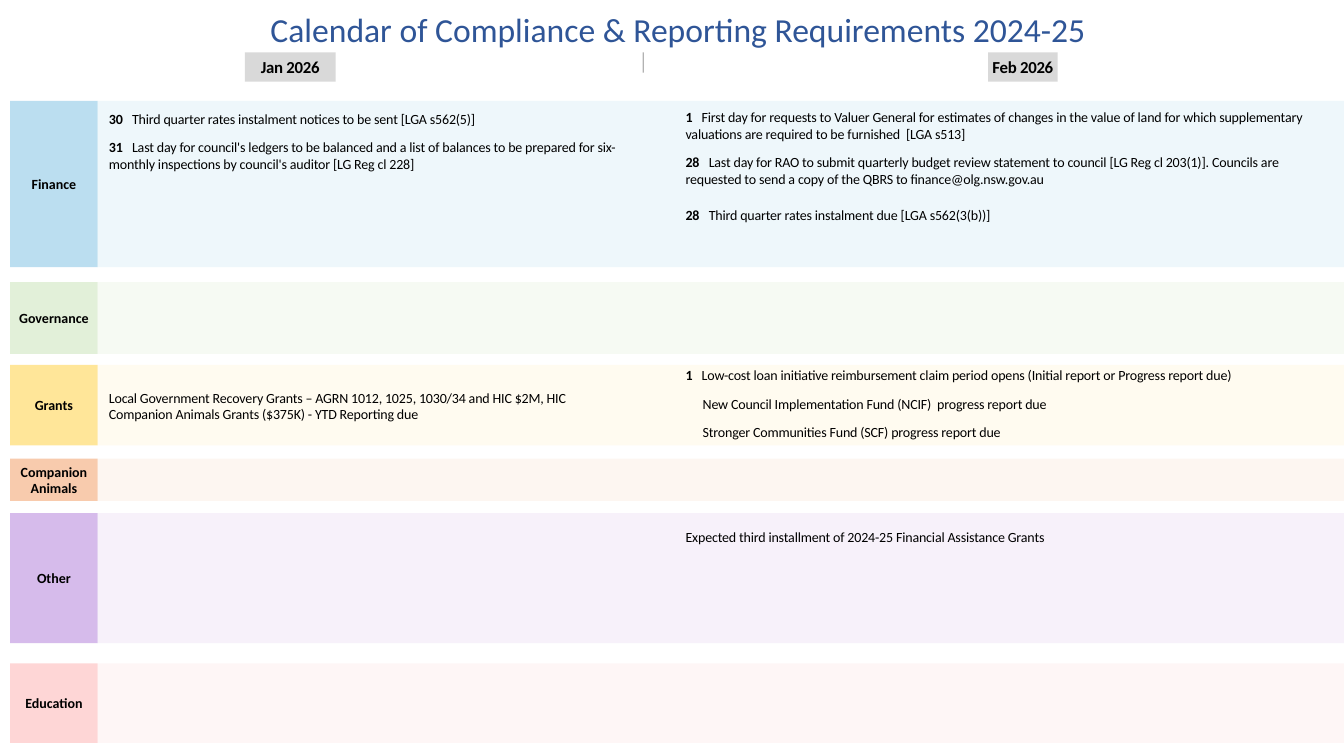
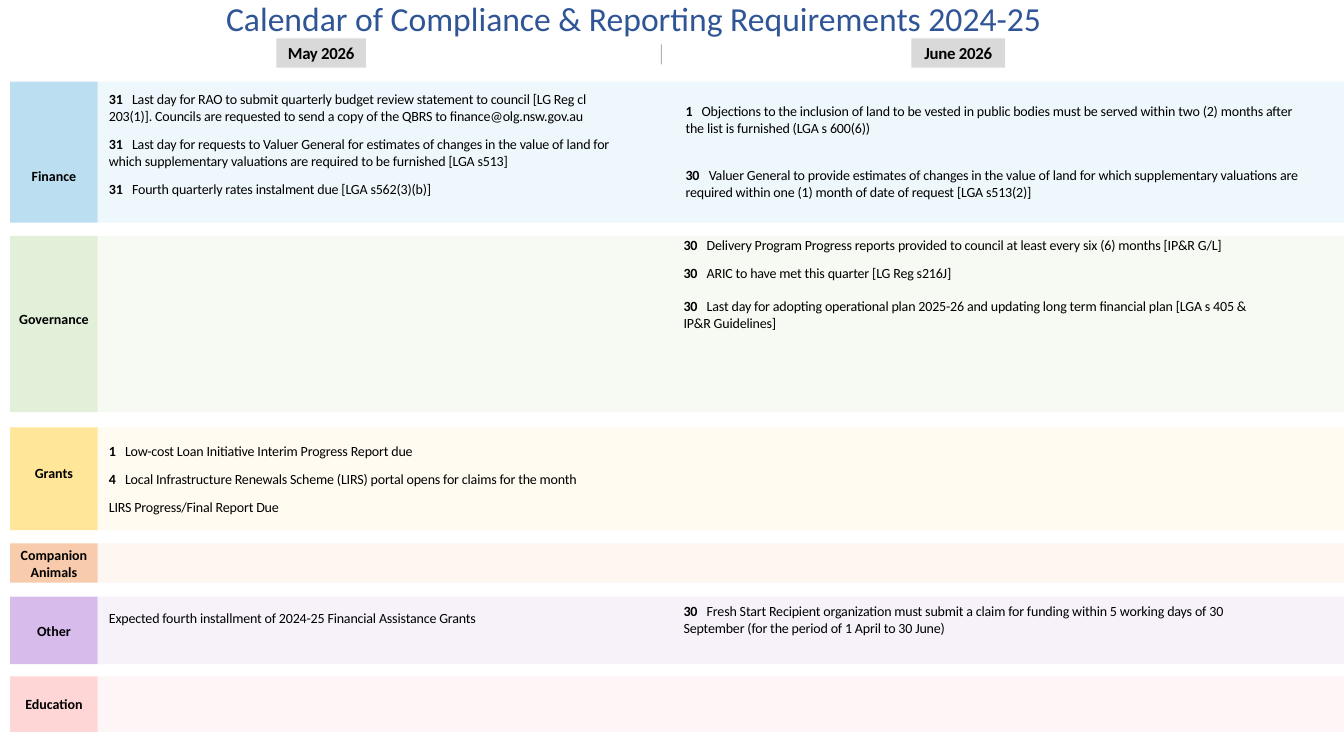
from dataclasses import dataclass, field

from lxml import etree
from pptx import Presentation
from pptx.dml.color import RGBColor
from pptx.enum import shapes, text
from pptx.oxml.ns import qn
from pptx.util import Pt

PX = 9144  # EMU per px, 100 px to the inch
WIDE, HIGH = 1333, 750
LEFT, EDGE = 10, 97  # left and right side of the label blocks
LINE = 17
COLS = {  # left side and width of the text columns
    "first": (108, 505),
    "last": (680, 620),
    "slim": (678, 586),
    "inner": (697, 460),
}


@dataclass(frozen=True)
class Theme:
    font: str = "Calibri"
    ink: str = "000000"
    head: str = "2F5597"
    month: str = "D9D9D9"
    head_pt: int = 24
    month_pt: int = 12
    body_pt: int = 10
    gap_pt: int = 8
    clear: int = 20
    rule_clear: int = 30
    # topic: (label block, tinted band)
    topics: dict = field(default_factory=lambda: {
        "Finance": ("BBDEF0", "ADD8ED"),
        "Governance": ("E2F0D9", "D3E8C6"),
        "Grants": ("FFE699", "FFECB7"),
        "Companion Animals": ("F8CBAD", "F9D5BD"),
        "Other": ("D6BBEB", "D7BCEA"),
        "Education": ("FED6D6", "FED6D6"),
    })


class Deck:
    def __init__(self, theme):
        self.theme = theme
        self.prs = Presentation()
        self.prs.slide_width, self.prs.slide_height = WIDE * PX, HIGH * PX
        self.slide = None

    def page(self):
        self.slide = self.prs.slides.add_slide(self.prs.slide_layouts[5])

    def run(self, para, words, size, color=None, bold=False, track=0):
        """Add one run; track is letter spacing in hundredths of a point."""
        run = para.add_run()
        run.text = words
        run.font.name, run.font.size, run.font.bold = self.theme.font, Pt(size), bold
        run.font.color.rgb = RGBColor.from_string(color or self.theme.ink)
        if track:
            run.font._element.set("spc", str(track))

    def fade(self, part, opacity):
        """Make the colour of a shape or line partly transparent."""
        tone = part._element.spPr.find(".//" + qn("a:srgbClr"))
        etree.SubElement(tone, qn("a:alpha")).set("val", str(opacity * 1000))

    def frame(self, shape, anchor=text.MSO_ANCHOR.MIDDLE, wrap=True):
        """Set up a text frame without insets."""
        box = shape.text_frame
        box.word_wrap, box.vertical_anchor = wrap, anchor
        box.margin_left = box.margin_right = box.margin_top = box.margin_bottom = 0
        return box

    def title(self, x, y, words):
        head = self.slide.shapes.title
        head.left, head.top, head.width, head.height = (n * PX for n in (x, y, 857, 50))
        box = self.frame(head)
        para = box.paragraphs[0]
        para.alignment = text.PP_ALIGN.CENTER
        self.run(para, words, self.theme.head_pt, self.theme.head)

    def rect(self, area, color):
        shape = self.slide.shapes.add_shape(
            shapes.MSO_SHAPE.RECTANGLE, *(n * PX for n in area))
        shape.shadow.inherit = False
        shape.fill.solid()
        shape.fill.fore_color.rgb = RGBColor.from_string(color)
        shape.line.fill.background()
        return shape

    def tag(self, words, area, color, size, wrap=True, track=0):
        """Add a filled box with a bold centred name."""
        box = self.frame(self.rect(area, color), wrap=wrap)
        para = box.paragraphs[0]
        para.alignment = text.PP_ALIGN.CENTER
        self.run(para, words, size, bold=True, track=track)
        return box

    def row(self, topic, top, high, drop=0):
        """Add a tinted band and its label, lowered by drop."""
        block, tint = self.theme.topics[topic]
        band = self.rect((EDGE, top, WIDE - EDGE, high), tint)
        self.fade(band, self.theme.clear)
        label = self.tag(topic, (LEFT, top, EDGE - LEFT, high), block, self.theme.body_pt)
        label.margin_top = 2 * drop * PX

    def month(self, name, x, y, w):
        self.tag(name, (x, y, w, 29), self.theme.month, self.theme.month_pt,
                 wrap=False, track=-20)

    def rule(self, x, y):
        line = self.slide.shapes.add_connector(
            shapes.MSO_CONNECTOR.STRAIGHT, x * PX, y * PX, x * PX, (y + 20) * PX)
        line.line.width = Pt(0.75)
        line.line.color.rgb = RGBColor.from_string(self.theme.ink)
        self.fade(line, self.theme.rule_clear)
        etree.SubElement(line._element.spPr, qn("a:effectLst"))

    def cell(self, col, top, *items):
        """List the (day, words) items of one month and topic."""
        x, w = COLS[col]
        shape = self.slide.shapes.add_textbox(
            x * PX, top * PX, w * PX, LINE * len(items) * PX)
        box = self.frame(shape, text.MSO_ANCHOR.TOP)
        for n, (day, words) in enumerate(items):
            para = box.add_paragraph() if n else box.paragraphs[0]
            if n:
                para.space_before = Pt(self.theme.gap_pt)
            if day:
                stops = etree.SubElement(para._p.get_or_add_pPr(), qn("a:tabLst"))
                stop = etree.SubElement(stops, qn("a:tab"))
                stop.set("pos", str((9 + 7 * len(day)) * PX))
                stop.set("algn", "l")
                self.run(para, day, self.theme.body_pt, bold=True, track=-10)
                words = "\t" + words
            self.run(para, words, self.theme.body_pt, track=-10)


TITLE = "Calendar of Compliance & Reporting Requirements 2024-25"
REVIEW = ("Last day for RAO to submit quarterly budget review statement to council "
          "[LG Reg cl 203(1)]. Councils are requested to send a copy of the QBRS to "
          "finance@olg.nsw.gov.au")
VALUES = ("day for requests to Valuer General for estimates of changes in the value "
          "of land for which supplementary valuations are required to be furnished")

# rows: topic, top, height, drop of the label; cells: column, top, items
PAGES = [
    dict(
        title=(244, 4),
        rule=(638, 52),
        months=[("Jan 2026", 243, 52, 90), ("Feb 2026", 980, 52, 69)],
        rows=[
            ("Finance", 100, 165),
            ("Governance", 280, 71),
            ("Grants", 362, 80),
            ("Companion Animals", 455, 42),
            ("Other", 509, 129),
            ("Education", 658, 79),
        ],
        cells=[
            ("first", 110,
             ("30", "Third quarter rates instalment notices to be sent [LGA s562(5)]"),
             ("31", "Last day for council's ledgers to be balanced and a list of balances "
                    "to be prepared for six-monthly inspections by council's auditor "
                    "[LG Reg cl 228]")),
            ("last", 108,
             ("1", f"First {VALUES}  [LGA s513]"),
             ("28", REVIEW)),
            ("last", 205,
             ("28", "Third quarter rates instalment due [LGA s562(3(b))]")),
            ("first", 386,
             ("", "Local Government Recovery Grants – AGRN 1012, 1025, 1030/34 and HIC $2M, "
                  "HIC Companion Animals Grants ($375K) - YTD Reporting due")),
            ("last", 364,
             ("1", "Low-cost loan initiative reimbursement claim period opens "
                   "(Initial report or Progress report due)")),
            ("inner", 392,
             ("", "New Council Implementation Fund (NCIF)  progress report due"),
             ("", "Stronger Communities Fund (SCF) progress report due")),
            ("last", 524,
             ("", "Expected third installment of 2024-25 Financial Assistance Grants")),
        ],
    ),
    dict(
        title=(200, -7),
        rule=(656, 44),
        months=[("May 2026", 274, 38, 89), ("June 2026", 904, 38, 93)],
        rows=[
            ("Finance", 81, 140, 24),
            ("Governance", 234, 175, -5),
            ("Grants", 424, 102, -6),
            ("Companion Animals", 539, 39),
            ("Other", 592, 67),
            ("Education", 671, 55),
        ],
        cells=[
            ("first", 90,
             ("31", REVIEW),
             ("31", f"Last {VALUES} [LGA s513]"),
             ("31", "Fourth quarterly rates instalment due [LGA s562(3)(b)]")),
            ("last", 102,
             ("1", "Objections to the inclusion of land to be vested in public bodies must "
                   "be served within two (2) months after the list is furnished "
                   "(LGA s 600(6))")),
            ("last", 165,
             ("30", "Valuer General to provide estimates of changes in the value of land for "
                    "which supplementary valuations are required within one (1) month of "
                    "date of request [LGA s513(2)]")),
            ("slim", 235,
             ("30", "Delivery Program Progress reports provided to council at least every "
                    "six (6) months [IP&R G/L]"),
             ("30", "ARIC to have met this quarter [LG Reg s216J]")),
            ("slim", 295,
             ("30", "Last day for adopting operational plan 2025-26 and updating long term "
                    "financial plan [LGA s 405 & IP&R Guidelines]")),
            ("first", 439,
             ("1", "Low-cost Loan Initiative Interim Progress Report due"),
             ("4", "Local Infrastructure Renewals Scheme (LIRS) portal opens for claims for "
                   "the month"),
             ("", "LIRS Progress/Final Report Due")),
            ("first", 605,
             ("", "Expected fourth installment of 2024-25 Financial Assistance Grants")),
            ("slim", 598,
             ("30", "Fresh Start Recipient organization must submit a claim for funding "
                    "within 5 working days of 30 September (for the period of 1 April to "
                    "30 June)")),
        ],
    ),
]


def main():
    deck = Deck(Theme())
    for page in PAGES:
        deck.page()
        deck.title(*page["title"], TITLE)
        for row in page["rows"]:
            deck.row(*row)
        for month in page["months"]:
            deck.month(*month)
        deck.rule(*page["rule"])
        for cell in page["cells"]:
            deck.cell(*cell)
    deck.prs.save("out.pptx")


if __name__ == "__main__":
    main()
